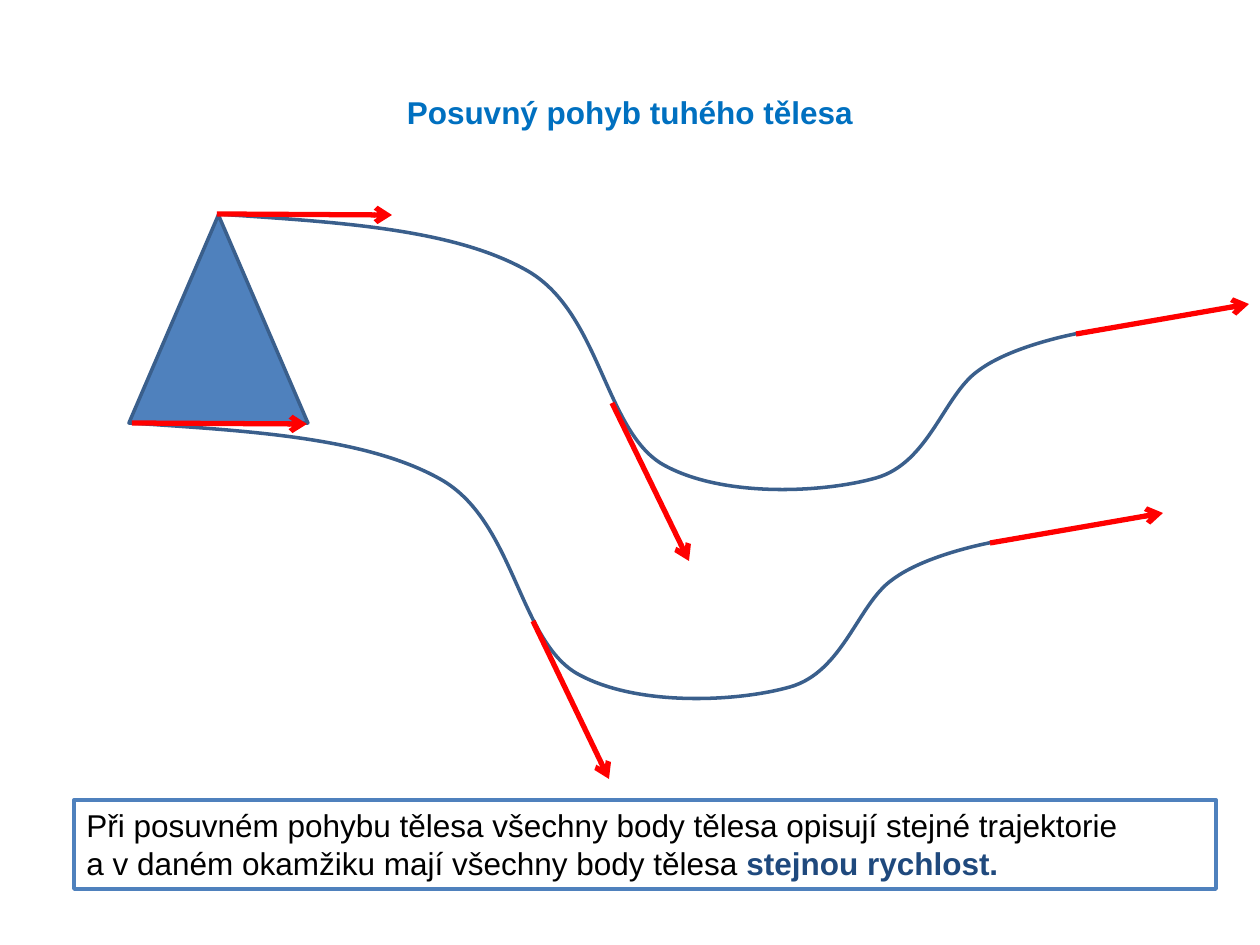
"""Build a slide on the translational motion of a rigid body."""
from lxml.etree import SubElement
from pptx import Presentation
from pptx.dml.color import RGBColor
from pptx.enum.shapes import MSO_CONNECTOR, MSO_SHAPE
from pptx.enum.text import MSO_ANCHOR, MSO_AUTO_SIZE, PP_ALIGN
from pptx.oxml.ns import qn
from pptx.util import Pt

SCALE = 914400 / 126
BODY_FORMAT = {"name": "Arial", "size": Pt(18), "bold": False}
STRONG_FORMAT = {**BODY_FORMAT, "bold": True}


def color(hex_value):
    return RGBColor.from_string(hex_value)


def add_run(paragraph, text, hex_value, formats):
    run = paragraph.add_run()
    run.text = text
    run.font.color.rgb = color(hex_value)
    for name, value in formats.items():
        setattr(run.font, name, value)


presentation = Presentation()
presentation.slide_width = round(1260 * SCALE)
presentation.slide_height = round(945 * SCALE)
slide = presentation.slides.add_slide(presentation.slide_layouts[5])
shapes = slide.shapes

trajectory = [
    (131, 423),
    (248, 431), (365, 437), (440, 479),
    (514, 520), (518, 638), (576, 673),
    (635, 707), (737, 702), (790, 687),
    (843, 672), (858, 604), (892, 580),
    (926, 554), (994, 542), (994, 542),
]
for shift_x, shift_y in [(0, 0), (86, -209)]:
    points = [(x + shift_x, y + shift_y) for x, y in trajectory]
    builder = shapes.build_freeform(*points[0], scale=SCALE)
    builder.add_line_segments(points[1:], close=False)
    curve = builder.convert_to_shape()
    curve.shadow.inherit = False
    curve.fill.background()
    curve.line.color.rgb = color("3A5F8C")
    curve.line.width = Pt(2)
    outline = next(curve.element.iter(qn("a:path")))
    segments = outline.findall(qn("a:lnTo"))
    for start in range(0, len(segments), 3):
        bezier = SubElement(outline, qn("a:cubicBezTo"))
        for segment in segments[start:start + 3]:
            bezier.append(segment[0])
            outline.remove(segment)

title = shapes.title
title_box = {"left": 273, "top": 87, "width": 714, "height": 50}
for name, value in title_box.items():
    setattr(title, name, round(value * SCALE))
title.text_frame.auto_size = MSO_AUTO_SIZE.NONE
title.text_frame.vertical_anchor = MSO_ANCHOR.TOP
title_paragraph = title.text_frame.paragraphs[0]
title_paragraph.alignment = PP_ALIGN.CENTER
add_run(title_paragraph, "Posuvný pohyb tuhého tělesa", "0070C0", STRONG_FORMAT)

triangle_box = [round(value * SCALE) for value in (129, 215, 179, 208)]
triangle = shapes.add_shape(MSO_SHAPE.ISOSCELES_TRIANGLE, *triangle_box)
triangle.shadow.inherit = False
triangle.fill.solid()
triangle.fill.fore_color.rgb = color("4F81BD")
triangle.line.color.rgb = color("3A5F8C")
triangle.line.width = Pt(2)

statement = shapes.add_textbox(*[round(value * SCALE) for value in (74, 800, 1142, 89)])
statement.line.color.rgb = color("4F81BD")
statement.line.width = Pt(2.25)
statement.text_frame.word_wrap = True
first_paragraph = statement.text_frame.paragraphs[0]
add_run(first_paragraph, "Při posuvném pohybu tělesa všechny body tělesa opisují stejné trajektorie",
        "000000", BODY_FORMAT)
second_paragraph = statement.text_frame.add_paragraph()
add_run(second_paragraph, "a v daném okamžiku mají všechny body tělesa ", "000000", BODY_FORMAT)
add_run(second_paragraph, "stejnou rychlost.", "1F497D", STRONG_FORMAT)

velocities = [
    (217, 214, 392, 215),
    (132, 423, 307, 424),
    (612, 403, 689, 561),
    (533, 621, 609, 779),
    (1076, 334, 1249, 304),
    (990, 543, 1163, 513),
]
for ends in velocities:
    arrow = shapes.add_connector(MSO_CONNECTOR.STRAIGHT, *[round(value * SCALE) for value in ends])
    arrow.line.color.rgb = color("FF0000")
    arrow.line.width = Pt(3)
    SubElement(arrow.line._get_or_add_ln(), qn("a:tailEnd"), type="arrow")
    SubElement(arrow.element.spPr, qn("a:effectLst"))

presentation.save("out.pptx")
